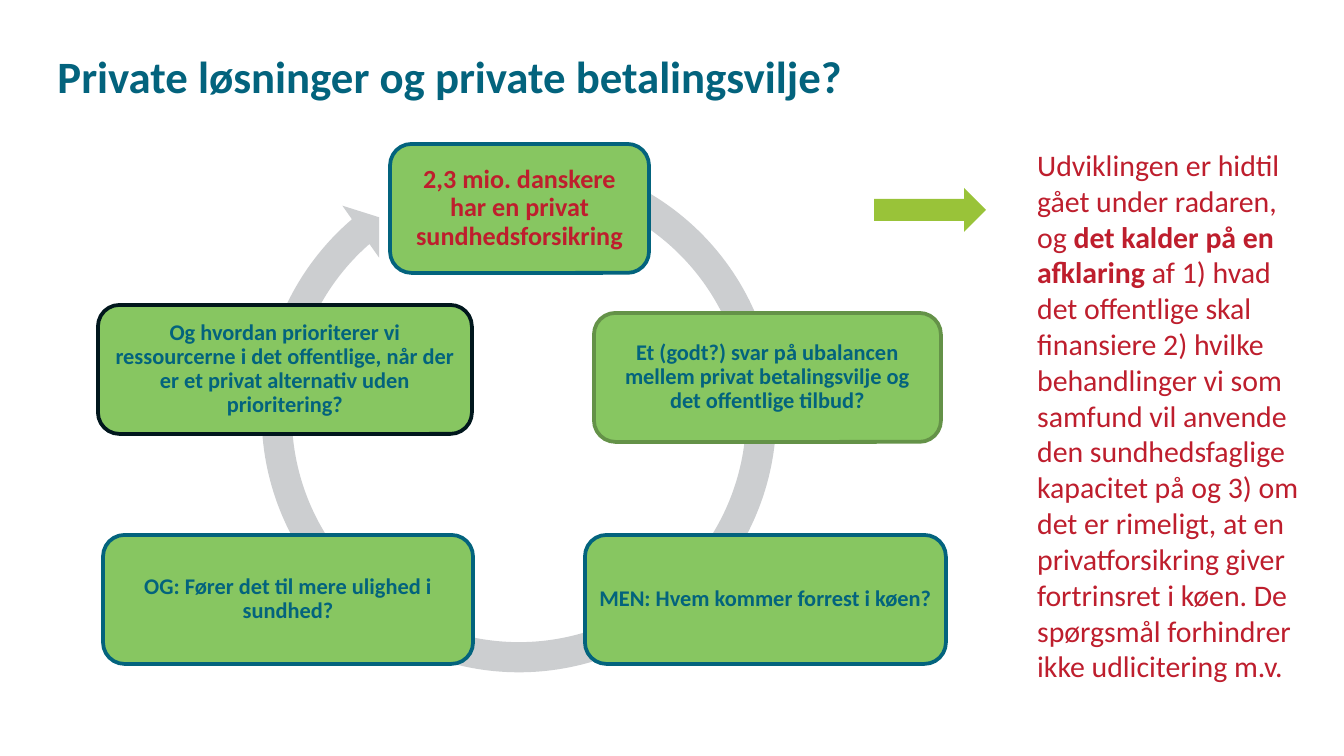
from pptx import Presentation
from pptx.dml.color import RGBColor
from pptx.enum.shapes import MSO_SHAPE as Shape
from pptx.enum.text import MSO_ANCHOR as Anchor, MSO_AUTO_SIZE as AutoSize, PP_ALIGN as Align
from pptx.util import Emu, Pt

PX = 914400 / 134.4
FONT = "Calibri"
TEAL, RED, GREEN = "03637D", "BE1E2D", "87C661"

TITLE = "Private løsninger og private betalingsvilje?"
STEP_HEIGHT = 129
# Clockwise: left, top, width, text, size, text colour, outline
STEPS = [
    (390, 144, 259, "2,3 mio. danskere har en privat sundhedsforsikring", 14, RED, TEAL),
    (594, 313, 347, "Et (godt?) svar på ubalancen mellem privat betalingsvilje og "
                    "det offentlige tilbud?", 12, TEAL, "649248"),
    (585, 535, 361, "MEN: Hvem kommer forrest i køen?", 12, TEAL, TEAL),
    (103, 535, 370, "OG: Fører det til mere ulighed i sundhed?", 12, TEAL, TEAL),
    (98, 305, 374, "Og hvordan prioriterer vi ressourcerne i det offentlige, når der er et "
                   "privat alternativ uden prioritering?", 12, TEAL, "01171D"),
]
# Text, bold
CONCLUSION = [
    ("Udviklingen er hidtil gået under radaren, og ", False),
    ("det kalder på en afklaring ", True),
    ("af 1) hvad det offentlige skal finansiere 2) hvilke behandlinger vi som samfund "
     "vil anvende den sundhedsfaglige kapacitet på og 3) om det er rimeligt, at en "
     "privatforsikring giver fortrinsret i køen. De spørgsmål forhindrer ikke "
     "udlicitering m.v.", False),
]


def px(*lengths):
    return [Emu(round(length * PX)) for length in lengths]


def rgb(color):
    return RGBColor.from_string(color)


def set_font(font, size, color, bold=None):
    font.name, font.size, font.bold = FONT, Pt(size), bold
    font.color.rgb = rgb(color)


def add_filled(kind, box, fill, outline=None):
    shape = slide.shapes.add_shape(kind, *px(*box))
    shape.shadow.inherit = False
    shape.fill.solid()
    shape.fill.fore_color.rgb = rgb(fill)
    if outline:
        shape.line.color.rgb = rgb(outline)
        shape.line.width = Pt(2)
    else:
        shape.line.fill.background()
    return shape


prs = Presentation()
prs.slide_width, prs.slide_height = px(1344, 756)
slide = prs.slides.add_slide(prs.slide_layouts[5])

# Title
title = slide.shapes.title
title.left, title.top, title.width, title.height = px(44, 42, 1086, 67)
title.text_frame.text = TITLE
title.text_frame.vertical_anchor = Anchor.TOP
title.text_frame.auto_size = AutoSize.NONE
heading = title.text_frame.paragraphs[0]
heading.alignment = Align.LEFT
set_font(heading.font, 24, TEAL, True)

# Ring behind the steps
ring = add_filled(Shape.CIRCULAR_ARROW, (245, 141, 548, 548), "CCCED0")
# Thickness, head angle, end angle, start angle, head width; 0.6 is one degree
for index, value in enumerate((0.055, 3.31, 137.52, 174, 0.058)):
    ring.adjustments[index] = value

# Steps
for left, top, width, text, size, color, outline in STEPS:
    step = add_filled(Shape.ROUNDED_RECTANGLE, (left, top, width, STEP_HEIGHT), GREEN, outline)
    frame = step.text_frame
    frame.word_wrap = True
    frame.vertical_anchor = Anchor.MIDDLE
    frame.margin_left, frame.margin_top, frame.margin_right, frame.margin_bottom = px(7, 7, 7, 7)
    frame.text = text
    paragraph = frame.paragraphs[0]
    paragraph.alignment = Align.CENTER
    paragraph.line_spacing = 0.9
    set_font(paragraph.font, size, color, True)

# Arrow to the conclusion
add_filled(Shape.RIGHT_ARROW, (874, 188, 112, 44), "99C339")

# Conclusion
conclusion = slide.shapes.add_textbox(*px(1024, 140, 292, 556)).text_frame
conclusion.word_wrap = True
paragraph = conclusion.paragraphs[0]
set_font(paragraph.font, 16, RED)
for text, bold in CONCLUSION:
    run = paragraph.add_run()
    run.text = text
    run.font.bold = bold

prs.save("out.pptx")
